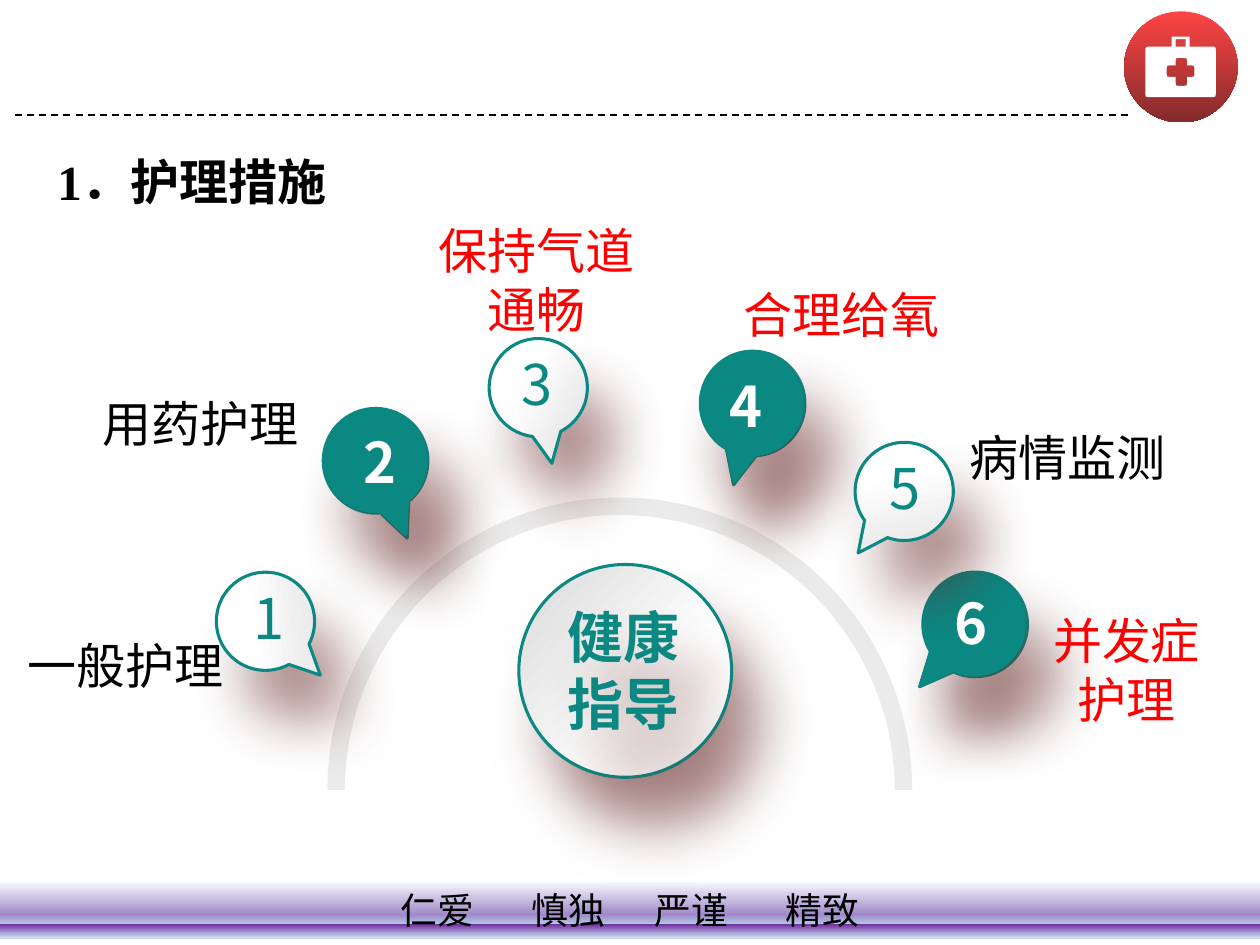
import math
from dataclasses import dataclass

import lxml.etree
import pptx
import pptx.dml.color
import pptx.enum.dml
import pptx.enum.shapes
import pptx.enum.text
import pptx.oxml.ns
import pptx.util

Cm = pptx.util.Cm
Pt = pptx.util.Pt
qn = pptx.oxml.ns.qn
MSO_SHAPE = pptx.enum.shapes.MSO_SHAPE
ALIGN = pptx.enum.text.PP_ALIGN
ANCHOR = pptx.enum.text.MSO_ANCHOR


@dataclass(frozen=True)
class Theme:
    black: str = "000000"
    white: str = "FFFFFF"
    red: str = "FF0000"
    teal: str = "0C8882"
    arc: str = "EBEBEB"
    shadow: str = "632523"
    badge: tuple = ((0, "FE4444"), (100, "832B2B"))
    pale: tuple = ((0, "FFFFFF"), (36, "FFFFFF"), (100, "D9D9D9"))
    footer: tuple = ((0, "F6F9FC"), (58, "9F89C9"), (74, "B0C6E1"), (75, "7030A0"), (93, "B7B5DE"),
                     (96, "C3CBE8"), (98, "C9D6ED"), (99, "CDDFF1"), (100, "CAD9EB"))
    text_font: str = "Times New Roman"
    sans_font: str = "Noto Sans CJK SC"
    label_size: int = 28
    large_size: int = 32
    footer_size: int = 21


THEME = Theme()


def rgb(value):
    return pptx.dml.color.RGBColor.from_string(value)


def add_xml(parent, tag, **attributes):
    return lxml.etree.SubElement(parent, qn(tag), attributes)


def cast_shadow(shape):
    effects = shape.element.spPr.find(qn("a:effectLst"))
    outer = add_xml(effects, "a:outerShdw", blurRad=str(Pt(33)), dist=str(Pt(33)),
                    dir="3600000", algn="ctr", rotWithShape="0")
    color = add_xml(outer, "a:srgbClr", val=THEME.shadow)
    add_xml(color, "a:alpha", val="50000")


def paint(shape, fill, angle=90, line=None):
    """Fill with one colour or with (percent, colour) stops running clockwise at angle."""
    if isinstance(fill, str):
        shape.fill.solid()
        shape.fill.fore_color.rgb = rgb(fill)
    else:
        shape.fill.gradient()
        shape.fill.gradient_angle = 360 - angle
        stops = shape.element.spPr.find(".//" + qn("a:gsLst"))
        for stop in list(stops):
            stops.remove(stop)
        for percent, color in fill:
            stop = add_xml(stops, "a:gs", pos=str(percent * 1000))
            add_xml(stop, "a:srgbClr", val=color)
    if line:
        shape.line.color.rgb = rgb(line)
        shape.line.width = Pt(1.75)
    else:
        shape.line.fill.background()
    shape.shadow.inherit = False


def add_preset(slide, kind, left, top, width, height):
    return slide.shapes.add_shape(kind, Cm(left), Cm(top), Cm(width), Cm(height))


def style_paragraph(paragraph, size, color, font, bold=False, align=ALIGN.LEFT):
    paragraph.alignment = align
    paragraph.font.size = Pt(size)
    paragraph.font.name = font
    paragraph.font.bold = bold
    paragraph.font.color.rgb = rgb(color)


def add_text(slide, text, box, size, color, font=THEME.text_font, bold=False,
             align=ALIGN.LEFT, wrap=True, anchor=ANCHOR.TOP):
    textbox = slide.shapes.add_textbox(*map(Cm, box))
    frame = textbox.text_frame
    frame.word_wrap = wrap
    frame.vertical_anchor = anchor
    frame.text = text
    style_paragraph(frame.paragraphs[0], size, color, font, bold, align)
    return textbox


def add_outline(slide, contours):
    """Draw closed contours in centimetres; a step is [point] or [control, control, point]."""
    builder = None
    for contour in contours:
        points = [(Cm(x), Cm(y)) for step in contour for x, y in step]
        if builder is None:
            builder = slide.shapes.build_freeform(*points[0], scale=1.0)
        else:
            builder.move_to(*points[0])
        builder.add_line_segments(points[1:], close=False)
    shape = builder.convert_to_shape()
    path = shape.element.spPr.find(".//" + qn("a:path"))
    nodes = iter(list(path))
    for contour in contours:
        for step in contour:
            group = [next(nodes) for _ in step]
            if len(group) == 3:
                group[0].tag = qn("a:cubicBezTo")
                for node in group[1:]:
                    group[0].append(node[0])
                    path.remove(node)
        group[-1 if len(group) == 1 else 0].addnext(path.makeelement(qn("a:close")))
    return shape


def arc_steps(x, y, radius, start):
    """Curves clockwise from start to its mirror angle, counted from twelve o'clock."""
    def on_circle(angle, reach):
        sine, cosine = math.sin(angle), math.cos(angle)
        return x + radius * (sine + reach * cosine), y - radius * (cosine - reach * sine)

    angles = [math.radians(a) for a in (start, 90, 180, 270, 360 - start)]
    steps = [[on_circle(angles[0], 0)]]
    for first, last in zip(angles, angles[1:]):
        reach = 4 / 3 * math.tan((last - first) / 4)
        steps.append([on_circle(first, reach), on_circle(last, -reach), on_circle(last, 0)])
    return steps


def add_pin(slide, center, width, height, rotation, fill, hole=False):
    """Draw a round speech bubble whose tip points up before it is rotated."""
    x, y = center
    circle_y = y + (height - width) / 2
    contours = [[[(x, y - height / 2)]] + arc_steps(x, circle_y, width / 2, 17)]
    if hole:
        notch = [[(x - 0.6, y - 0.19)], [(x + 0.6, y - 0.19)]]
        contours.append(notch + arc_steps(x, circle_y, width / 2 - 0.1, 25))
    pin = add_outline(slide, contours)
    pin.rotation = rotation
    paint(pin, fill, 220, THEME.teal)
    cast_shadow(pin)


def add_numbered_pin(slide, number, center, rotation):
    if number % 2 == 0:
        add_pin(slide, center, 2.11, 2.74, rotation, THEME.teal, hole=True)
        add_pin(slide, center, 2.01, 2.59, rotation, THEME.teal)
    else:
        add_pin(slide, center, 1.98, 2.54, rotation, THEME.pale)


def add_number(slide, number, left, top):
    solid = number % 2 == 0
    add_text(slide, str(number), (left, top, 1.07, 1.63), THEME.large_size,
             THEME.white if solid else THEME.teal, THEME.sans_font, bold=solid, wrap=False)


def add_footer(slide):
    footer = add_preset(slide, MSO_SHAPE.RECTANGLE, 0, 17.78, 25.4, 1.14)
    paint(footer, THEME.footer)
    frame = footer.text_frame
    frame.margin_left = Cm(8.08)
    frame.margin_right = frame.margin_top = frame.margin_bottom = 0
    frame.vertical_anchor = ANCHOR.MIDDLE
    frame.text = "仁爱\t慎独\t严谨\t精致"
    paragraph = frame.paragraphs[0]
    tabs = add_xml(paragraph._p.get_or_add_pPr(), "a:tabLst")
    for position in (2.64, 5.12, 7.76):
        add_xml(tabs, "a:tab", pos=str(Cm(position)), algn="l")
    style_paragraph(paragraph, THEME.footer_size, THEME.black, THEME.sans_font)


def add_header(slide):
    rule = slide.shapes.add_connector(pptx.enum.shapes.MSO_CONNECTOR.STRAIGHT,
                                      Cm(0.3), Cm(2.32), Cm(22.83), Cm(2.32))
    rule.line.color.rgb = rgb(THEME.black)
    rule.line.width = Pt(1)
    rule.line.dash_style = pptx.enum.dml.MSO_LINE.DASH
    add_xml(rule.element.spPr, "a:effectLst")

    paint(add_preset(slide, MSO_SHAPE.OVAL, 22.66, 0.23, 2.29, 2.24), THEME.badge)

    def corner(x, y, end):
        return [(x, y), (x, y), end]

    case = [[(23.21, 0.94)], [(23.62, 0.94)], [(23.62, 0.74)], [(23.98, 0.74)], [(23.98, 0.94)],
            [(24.41, 0.94)], corner(24.51, 0.94, (24.51, 1.04)), [(24.51, 1.86)],
            corner(24.51, 1.96, (24.41, 1.96)), [(23.19, 1.96)],
            corner(23.09, 1.96, (23.09, 1.86)), [(23.09, 1.04)],
            corner(23.09, 0.94, (23.21, 0.94))]
    handle = [[(23.7, 0.79)], [(23.9, 0.79)], [(23.9, 0.94)], [(23.7, 0.94)]]
    cross = [[(23.76, 1.17)], [(23.87, 1.17)], corner(23.93, 1.17, (23.93, 1.23)),
             [(23.93, 1.32)], [(24.02, 1.32)], corner(24.08, 1.32, (24.08, 1.38)),
             [(24.08, 1.49)], corner(24.08, 1.55, (24.02, 1.55)), [(23.93, 1.55)],
             [(23.93, 1.67)], corner(23.93, 1.73, (23.87, 1.73)), [(23.76, 1.73)],
             corner(23.7, 1.73, (23.7, 1.67)), [(23.7, 1.55)], [(23.58, 1.55)],
             corner(23.52, 1.55, (23.52, 1.49)), [(23.52, 1.38)],
             corner(23.52, 1.32, (23.58, 1.32)), [(23.7, 1.32)], [(23.7, 1.23)],
             corner(23.7, 1.17, (23.76, 1.17))]
    paint(add_outline(slide, [case, handle, cross]), THEME.white)


def add_arc(slide):
    arc = add_preset(slide, MSO_SHAPE.BLOCK_ARC, 6.6, 10.03, 11.79, 11.79)
    for index, value in enumerate((108, 0, 0.03)):
        arc.adjustments[index] = value
    paint(arc, THEME.arc)


def add_hub(slide):
    hub = add_preset(slide, MSO_SHAPE.OVAL, 10.46, 11.38, 4.29, 4.29)
    paint(hub, THEME.pale, 220, THEME.teal)
    cast_shadow(hub)
    title = add_text(slide, "健康指导", (10.69, 11.84, 3.78, 3.33), THEME.large_size, THEME.teal,
                     bold=True, align=ALIGN.CENTER, anchor=ANCHOR.MIDDLE)
    title.shadow.inherit = False
    cast_shadow(title)


def main():
    presentation = pptx.Presentation()
    presentation.slide_width, presentation.slide_height = Cm(25.4), Cm(19.05)
    slide = presentation.slides.add_slide(presentation.slide_layouts[6])
    add_footer(slide)
    add_header(slide)
    add_text(slide, "1．护理措施", (0.91, 2.92, 5.97, 1.45), THEME.label_size, THEME.black,
             bold=True)
    add_arc(slide)

    pins = [(3, (10.9, 8.09), 169.8), (6, (19.45, 12.82), 221.7), (4, (15.1, 8.44), 193.2),
            (5, (18.06, 10.13), 216.8), (2, (7.69, 9.58), 157.8), (1, (5.55, 12.72), 134.5)]
    for pin in pins:
        add_numbered_pin(slide, *pin)
    add_hub(slide)
    for number in [(2, 7.07, 8.49), (4, 14.45, 7.37), (6, 19, 11.73),
                   (5, 17.68, 9.02), (3, 10.26, 6.93), (1, 4.86, 11.63)]:
        add_number(slide, *number)

    labels = [("一般护理", (0.3, 12.69, 4.57, 1.45), THEME.black, ALIGN.LEFT),
              ("用药护理", (1.82, 7.81, 4.57, 1.45), THEME.black, ALIGN.LEFT),
              ("保持气道通畅", (8.53, 4.32, 4.57, 2.64), THEME.red, ALIGN.CENTER),
              ("合理给氧", (14.74, 5.61, 4.57, 1.45), THEME.red, ALIGN.LEFT),
              ("病情监测", (19.3, 8.5, 4.57, 1.45), THEME.black, ALIGN.LEFT),
              ("并发症护理", (20.69, 12.19, 4.04, 2.64), THEME.red, ALIGN.CENTER)]
    for text, box, color, align in labels:
        add_text(slide, text, box, THEME.label_size, color, align=align)
    presentation.save("out.pptx")


if __name__ == "__main__":
    main()
